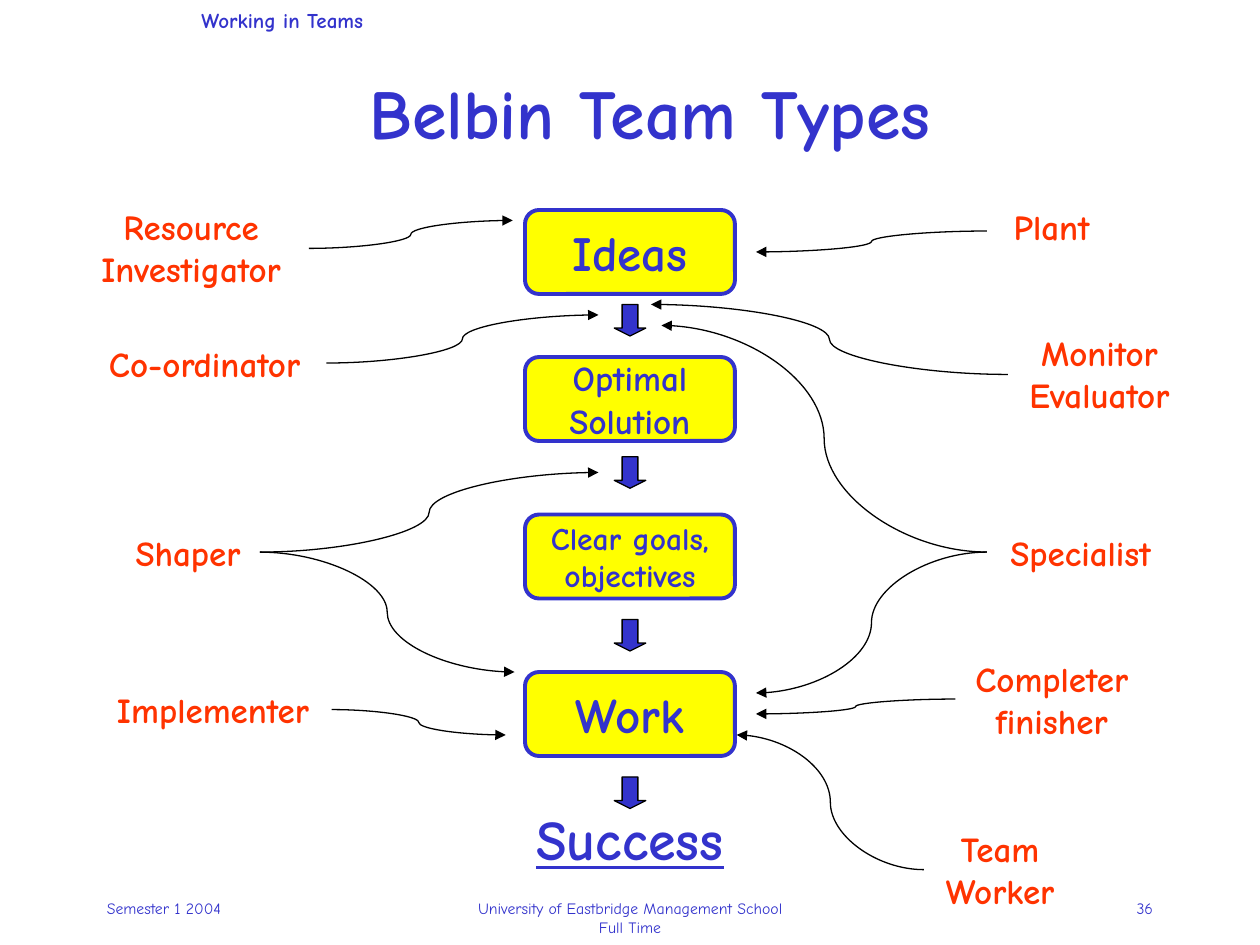
from dataclasses import dataclass

from lxml.etree import SubElement
from pptx import Presentation
from pptx.dml.color import RGBColor
from pptx.enum.shapes import MSO_CONNECTOR, MSO_SHAPE
from pptx.enum.text import MSO_ANCHOR, MSO_AUTO_SIZE, PP_ALIGN
from pptx.oxml.ns import qn
from pptx.shapes.autoshape import Shape
from pptx.slide import Slide
from pptx.util import Pt

FONT = "Comic Neue"
COLORS = {"blue": "3333CC", "yellow": "FFFF00", "red": "FF3300", "black": "000000"}
STAGE_LEFT, STAGE_WIDTH, STAGE_HEIGHT = 300, 120, 48
ARROW_SIZE = 18
ARROW_LEFT = STAGE_LEFT + (STAGE_WIDTH - ARROW_SIZE) / 2
ARROW_TOPS = (174, 261, 354, 444)


@dataclass(frozen=True)
class Stage:
    lines: tuple[str, ...]
    top: float
    size: float


@dataclass(frozen=True)
class Label:
    lines: tuple[str, ...]
    left: float
    top: float
    width: float
    height: float
    size: float = 20
    color: str = "red"
    bold: bool = True
    underline: bool = False
    align: PP_ALIGN = PP_ALIGN.CENTER
    wrap: bool = False


@dataclass(frozen=True)
class Link:
    start: tuple[float, float]
    end: tuple[float, float]


STAGES = (
    Stage(("Ideas",), 120, 28),
    Stage(("Optimal", "Solution"), 204, 20),
    Stage(("Clear goals,", "objectives"), 294, 18),
    Stage(("Work",), 384, 28),
)

ROLES = (
    Label(("Resource", "Investigator"), 43, 114, 132.5, 55.5),
    Label(("Plant",), 570, 114, 62, 31),
    Label(("Co-ordinator",), 48, 192, 138, 31),
    Label(("Shaper",), 66, 300, 83, 31),
    Label(("Implementer",), 54, 390, 135.5, 31),
    Label(("Monitor", "Evaluator"), 576, 186, 104.5, 55.5),
    Label(("Specialist",), 564, 300, 107, 31),
    Label(("Completer", "finisher"), 546, 372, 110, 55.5),
    Label(("Team", "Worker"), 528, 469.5, 87, 55.5),
)

RESULT = Label(("Success",), 292.5, 456, 135, 45.5, 32, "blue", underline=True)
HEADER = Label(("Working in Teams",), 108, 1, 119, 21.5, 12, "blue", align=PP_ALIGN.LEFT)
FOOTERS = (
    Label(("Semester 1 2004",), 54, 510, 150, 36, 9, "blue", False,
          align=PP_ALIGN.LEFT, wrap=True),
    Label(("University of Eastbridge Management School", "Full Time"), 246, 510, 228, 36,
          9, "blue", False, wrap=True),
    Label(("36",), 516, 510, 150, 36, 9, "blue", False, align=PP_ALIGN.RIGHT, wrap=True),
)

SHAPER_POINT = (148.5, 315.5)
SPECIALIST_POINT = (564, 315.5)
LINKS = (
    Link((176.5, 142), (293, 126)),
    Link((564, 132), (432, 144)),
    Link((186.5, 207.5), (342, 180)),
    Link(SHAPER_POINT, (342, 270)),
    Link(SHAPER_POINT, (294, 384)),
    Link((189.5, 405.5), (289, 420)),
    Link((576, 214), (372, 174)),
    Link(SPECIALIST_POINT, (378, 186)),
    Link(SPECIALIST_POINT, (432, 396)),
    Link((546, 399.5), (432, 408)),
    Link((528, 497), (421, 420)),
)


def rgb(name: str) -> RGBColor:
    return RGBColor.from_string(COLORS[name])


def write_lines(shape: Shape, lines: tuple[str, ...], size: float, color: str,
                align: PP_ALIGN, anchor: MSO_ANCHOR, bold: bool = True,
                underline: bool = False, wrap: bool = False) -> None:
    """Fill a shape with one formatted paragraph per line."""
    frame = shape.text_frame
    frame.word_wrap = wrap
    frame.auto_size = MSO_AUTO_SIZE.NONE
    frame.vertical_anchor = anchor
    for index, line in enumerate(lines):
        paragraph = frame.add_paragraph() if index else frame.paragraphs[0]
        paragraph.alignment = align
        run = paragraph.add_run()
        run.text = line
        run.font.name = FONT
        run.font.size = Pt(size)
        run.font.bold = bold
        run.font.underline = underline
        run.font.color.rgb = rgb(color)


def add_title(slide: Slide, text: str) -> None:
    title = slide.shapes.title
    title.left, title.top, title.width, title.height = Pt(204), Pt(36), Pt(381), Pt(55.5)
    write_lines(title, (text,), 40, "blue", PP_ALIGN.LEFT, MSO_ANCHOR.TOP)


def add_label(slide: Slide, label: Label) -> None:
    box = slide.shapes.add_textbox(
        Pt(label.left), Pt(label.top), Pt(label.width), Pt(label.height))
    write_lines(box, label.lines, label.size, label.color, label.align, MSO_ANCHOR.TOP,
                label.bold, label.underline, label.wrap)


def add_filled_shape(slide: Slide, kind: MSO_SHAPE, left: float, top: float, width: float,
                     height: float, fill: str, line: str, line_width: float) -> Shape:
    shape = slide.shapes.add_shape(kind, Pt(left), Pt(top), Pt(width), Pt(height))
    shape.shadow.inherit = False
    shape.fill.solid()
    shape.fill.fore_color.rgb = rgb(fill)
    shape.line.color.rgb = rgb(line)
    shape.line.width = Pt(line_width)
    return shape


def add_stage(slide: Slide, stage: Stage) -> None:
    shape = add_filled_shape(slide, MSO_SHAPE.ROUNDED_RECTANGLE, STAGE_LEFT, stage.top,
                             STAGE_WIDTH, STAGE_HEIGHT, "yellow", "blue", 2.25)
    write_lines(shape, stage.lines, stage.size, "blue", PP_ALIGN.CENTER, MSO_ANCHOR.MIDDLE)


def add_down_arrow(slide: Slide, top: float) -> None:
    arrow = add_filled_shape(slide, MSO_SHAPE.DOWN_ARROW, ARROW_LEFT, top,
                             ARROW_SIZE, ARROW_SIZE, "blue", "black", 0.75)
    arrow.adjustments[0] = 0.5
    arrow.adjustments[1] = 0.25


def add_link(slide: Slide, link: Link) -> None:
    """Draw a curved connector with an arrowhead at its end."""
    connector = slide.shapes.add_connector(
        MSO_CONNECTOR.CURVE, *(Pt(value) for value in link.start + link.end))
    connector.line.color.rgb = rgb("black")
    connector.line.width = Pt(0.75)
    properties = connector.element.spPr
    SubElement(properties.find(qn("a:ln")), qn("a:tailEnd"), type="triangle")
    SubElement(properties, qn("a:effectLst"))


def main() -> None:
    presentation = Presentation()
    presentation.slide_width, presentation.slide_height = Pt(720), Pt(540)
    slide = presentation.slides.add_slide(presentation.slide_layouts.get_by_name("Title Only"))
    add_title(slide, "Belbin Team Types")
    for stage in STAGES:
        add_stage(slide, stage)
    for top in ARROW_TOPS:
        add_down_arrow(slide, top)
    for label in (HEADER, *FOOTERS, RESULT, *ROLES):
        add_label(slide, label)
    for link in LINKS:
        add_link(slide, link)
    presentation.save("out.pptx")


if __name__ == "__main__":
    main()
